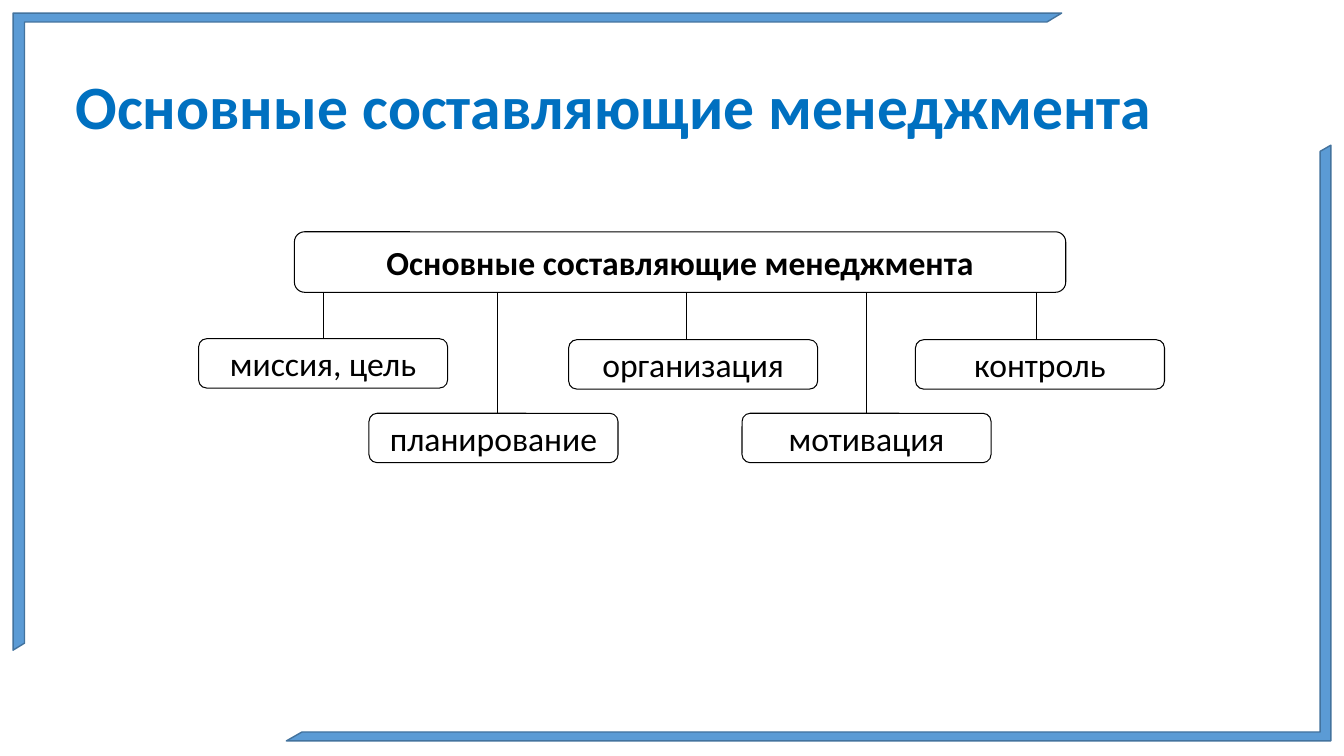
from dataclasses import dataclass

from pptx import Presentation
from pptx.dml.color import RGBColor
from pptx.enum.shapes import MSO_CONNECTOR, MSO_SHAPE
from pptx.enum.text import MSO_ANCHOR, PP_ALIGN
from pptx.oxml import parse_xml
from pptx.oxml.ns import nsdecls
from pptx.shapes.autoshape import Shape
from pptx.slide import Slide
from pptx.util import Inches, Pt

BLUE = RGBColor(0x5B, 0x9B, 0xD5)
EDGE = RGBColor(0x43, 0x73, 0x9E)
TITLE = RGBColor(0x00, 0x70, 0xC0)
BLACK = RGBColor(0, 0, 0)
WHITE = RGBColor(0xFF, 0xFF, 0xFF)

FONT = "Calibri"
HEADING = "Основные составляющие менеджмента"
ROOT_END = 2.9
PART_W, PART_H = 2.47, 0.49


@dataclass
class Frame:
    left: float
    top: float
    width: float
    height: float
    thick: float
    turn: int


@dataclass
class Part:
    text: str
    left: float
    top: float
    stem: float  # x of the line that drops from the root box


FRAMES = [
    Frame(0.13, 0.13, 10.4, 6.32, 0.014, 0),
    Frame(2.84, 1.44, 10.36, 5.91, 0.015, 180),
]
PARTS = [
    Part("миссия, цель", 1.97, 3.36, 3.2),
    Part("планирование", 3.66, 4.1, 4.93),
    Part("организация", 5.64, 3.37, 6.81),
    Part("мотивация", 7.36, 4.1, 8.6),
    Part("контроль", 9.08, 3.37, 10.28),
]


def add_frame(slide: Slide, frame: Frame) -> None:
    shape = slide.shapes.add_shape(
        MSO_SHAPE.HALF_FRAME, Inches(frame.left), Inches(frame.top),
        Inches(frame.width), Inches(frame.height))
    shape.adjustments[0] = frame.thick
    shape.adjustments[1] = 0.018
    shape.rotation = frame.turn
    shape.shadow.inherit = False
    shape.fill.solid()
    shape.fill.fore_color.rgb = BLUE
    shape.line.color.rgb = EDGE
    shape.line.width = Pt(1)


def add_title(slide: Slide) -> None:
    box = slide.shapes.add_textbox(
        Inches(0.65), Inches(0.36), Inches(11.5), Inches(1.45))
    frame = box.text_frame
    frame.word_wrap = True
    frame.vertical_anchor = MSO_ANCHOR.MIDDLE
    para = frame.paragraphs[0]
    para.text = HEADING
    para.line_spacing = 0.9
    para.font.name = FONT
    para.font.size = Pt(44)
    para.font.bold = True
    para.font.color.rgb = TITLE


def add_box(slide: Slide, text: str, left: float, top: float,
            width: float, height: float, bold: bool = False) -> Shape:
    box = slide.shapes.add_shape(
        MSO_SHAPE.ROUNDED_RECTANGLE, Inches(left), Inches(top),
        Inches(width), Inches(height))
    box.adjustments[0] = 0.167
    box.shadow.inherit = False
    box.fill.solid()
    box.fill.fore_color.rgb = WHITE
    box.line.color.rgb = BLACK
    box.line.width = Pt(0.75)
    frame = box.text_frame
    frame.word_wrap = True
    frame.vertical_anchor = MSO_ANCHOR.MIDDLE
    frame.margin_left = frame.margin_right = 0
    frame.margin_top = frame.margin_bottom = 0
    para = frame.paragraphs[0]
    para.text = text
    para.alignment = PP_ALIGN.CENTER
    para.font.name = FONT
    para.font.size = Pt(24)
    para.font.bold = bold
    para.font.color.rgb = BLACK
    return box


def add_stem(slide: Slide, part: Part, box: Shape) -> None:
    """Drop a line from the root box, joined where it meets the middle."""
    stem = Inches(part.stem)
    line = slide.shapes.add_connector(
        MSO_CONNECTOR.STRAIGHT, stem, Inches(ROOT_END), stem, box.top)
    if abs(part.left + PART_W / 2 - part.stem) < 0.02:
        line.end_connect(box, 0)
        line.begin_x = line.end_x
    line.line.color.rgb = BLACK
    line.line.width = Pt(0.75)
    line._element.spPr.append(
        parse_xml(f"<a:effectLst {nsdecls('a')}/>"))


def main() -> None:
    deck = Presentation()
    deck.slide_width = Inches(13.33)
    deck.slide_height = Inches(7.5)
    slide = deck.slides.add_slide(deck.slide_layouts[6])
    for frame in FRAMES:
        add_frame(slide, frame)
    add_title(slide)
    add_box(slide, HEADING, 2.92, 2.3, 7.65, ROOT_END - 2.3, bold=True)
    for part in PARTS:
        box = add_box(slide, part.text, part.left, part.top, PART_W, PART_H)
        add_stem(slide, part, box)
    deck.save("out.pptx")


if __name__ == "__main__":
    main()
